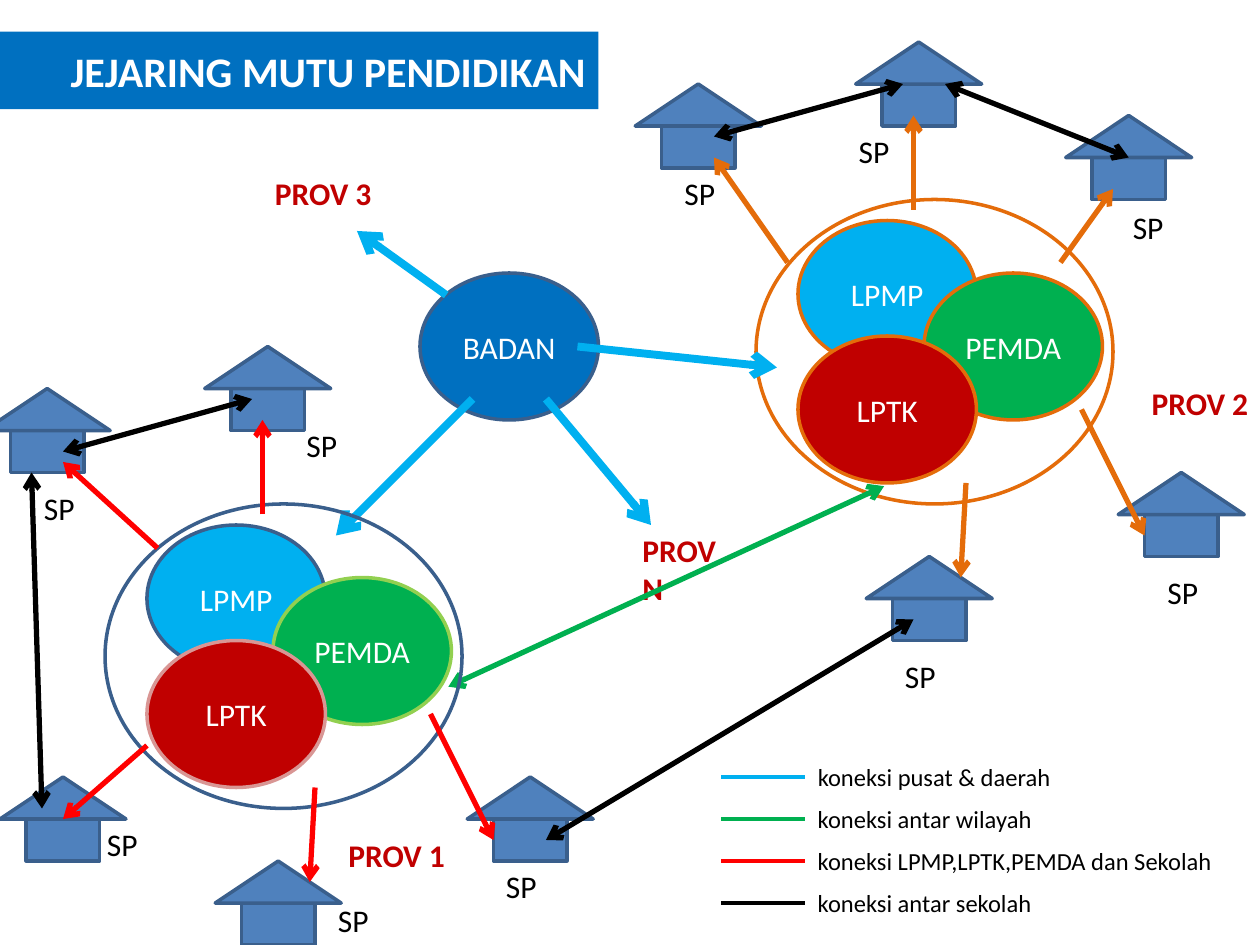
import pptx
import pptx.util
import pptx.dml.color
import pptx.enum.shapes
import pptx.enum.text
import pptx.oxml
import pptx.oxml.ns
from dataclasses import dataclass
from lxml import etree

SHAPE = pptx.enum.shapes.MSO_SHAPE
ALIGN = pptx.enum.text.PP_ALIGN
MIDDLE = pptx.enum.text.MSO_ANCHOR.MIDDLE


@dataclass(frozen=True)
class Theme:
    font: str = "Calibri"
    title_size: int = 24
    body_size: int = 18
    legend_size: int = 14
    white: str = "FFFFFF"
    black: str = "000000"
    navy: str = "0070C0"
    sky: str = "00B0F0"
    green: str = "00B050"
    maroon: str = "C00000"
    red: str = "FF0000"
    orange: str = "E46C0A"
    house: str = "4F81BD"
    outline: str = "3A5F8C"
    lime: str = "92D050"
    rose: str = "D99694"
    outline_width: float = 2
    link_width: float = 3
    national_width: float = 4.5
    legend_width: float = 2.25


THEME = Theme()

# Content. All positions are columns and rows of a 120 x 90 grid.
COLUMNS, ROWS = 120, 90
TITLE = "JEJARING MUTU PENDIDIKAN"
INSTITUTIONS = [  # name, offset in the ring, fill
    ("LPMP", (4, 2), THEME.sky),
    ("PEMDA", (16, 7), THEME.green),
    ("LPTK", (4, 13), THEME.maroon),
]
SHARED_ARROWS = [((15, 1), (15, -8)), ((31, 20), (37, 32)), ((20, 27), (19.5, 36))]

# Houses (house and its "SP" label) and arrows are offsets from the ring's corner.
PROVINCE_2 = {
    "corner": (72, 19),
    "ring": THEME.orange,
    "outlines": [THEME.orange] * 3,
    "houses": [((-9, -7), (-8, -3)), ((12, -11), (8.6, -7)), ((32, -4), (34.7, 0.2)),
               ((37, 30), (38, 35)), ((13, 38), (13, 43))],
    "arrows": SHARED_ARROWS + [((3, 6), (-4, -4)), ((29, 6), (34, -1))],
    "arrow_colour": THEME.orange,
}
PROVINCE_1 = {
    "corner": (10, 48),
    "ring": THEME.outline,
    "outlines": [THEME.outline, THEME.lime, THEME.rose],
    "houses": [((-9, -7), (-7, -2)), ((12, -11), (18, -8)), ((-7.5, 30), (-1, 30)),
               ((37, 30), (37, 34)), ((13, 38), (21, 37.2))],
    "arrows": SHARED_ARROWS + [((5, 4.2), (-4, -4)), ((4, 23), (-4, 30))],
    "arrow_colour": THEME.red,
}
PROVINCE_NAMES = [("PROV 1", (32, 79)), ("PROV 2", (108.5, 36)),
                  ("PROV 3", (25, 16)), ("PROV N", (60, 50))]
NATIONAL_ARROWS = [((55, 33), (74, 35)), ((45, 38), (32, 51)),
                   ((42.5, 28.1), (34, 22)), ((52, 38), (62, 50))]
REGIONAL_LINK = ((42.7, 65.4), (84.2, 46.3))
SCHOOL_LINKS = [((24, 38), (6, 43)), ((4, 77), (3, 45)), ((86, 8), (68, 13)),
                ((107.5, 15), (90, 8)), ((87, 59), (52, 80))]
LEGEND = [
    ("koneksi pusat & daerah", THEME.sky, 24.8),
    ("koneksi antar wilayah", THEME.green, 23),
    ("koneksi LPMP,LPTK,PEMDA dan Sekolah", THEME.red, 40.3),
    ("koneksi antar sekolah", THEME.black, 23),
]

deck = pptx.Presentation()
deck.slide_width, deck.slide_height = pptx.util.Inches(10), pptx.util.Inches(7.5)
page = deck.slides.add_slide(deck.slide_layouts[5])
docks = {}  # middle of a house's side -> (house body, connection site)


def across(columns):
    return round(deck.slide_width * columns / COLUMNS)


def down(rows):
    return round(deck.slide_height * rows / ROWS)


def shift(corner, offset):
    return corner[0] + offset[0], corner[1] + offset[1]


def colour(value):
    return pptx.dml.color.RGBColor.from_string(value)


def write(box, text, size, text_colour, bold=False, align=ALIGN.LEFT):
    box.text_frame.text = text
    para = box.text_frame.paragraphs[0]
    para.alignment = align
    font = para.runs[0].font
    font.name, font.size, font.bold = THEME.font, pptx.util.Pt(size), bold
    font.color.rgb = colour(text_colour)


def add_label(text, place, size, text_colour=THEME.black, text_size=THEME.body_size, bold=False):
    box = page.shapes.add_textbox(across(place[0]), down(place[1]), across(size[0]), down(size[1]))
    box.text_frame.word_wrap = False
    write(box, text, text_size, text_colour, bold)
    return box


def add_figure(kind, place, size, fill, outline):
    figure = page.shapes.add_shape(
        kind, across(place[0]), down(place[1]), across(size[0]), down(size[1]))
    figure.shadow.inherit = False
    if fill:
        figure.fill.solid()
        figure.fill.fore_color.rgb = colour(fill)
    else:
        figure.fill.background()
    figure.line.color.rgb = colour(outline)
    figure.line.width = pptx.util.Pt(THEME.outline_width)
    return figure


def add_institution(name, place, fill, outline):
    oval = add_figure(SHAPE.OVAL, place, (17, 14), fill, outline)
    oval.text_frame.vertical_anchor = MIDDLE
    write(oval, name, THEME.body_size, THEME.white, align=ALIGN.CENTER)


def add_house(place):
    body = add_figure(SHAPE.RECTANGLE, place, (7, 4), THEME.house, THEME.outline)
    add_figure(SHAPE.ISOSCELES_TRIANGLE, shift(place, (-2.5, -4)), (12, 4),
               THEME.house, THEME.outline)
    for site, middle in enumerate([(3.5, 0), (0, 2), (3.5, 4), (7, 2)]):
        docks[shift(place, middle)] = (body, site)


def add_link(start, end, line_colour, width, arrows=("tailEnd",)):
    link = page.shapes.add_connector(
        pptx.enum.shapes.MSO_CONNECTOR.STRAIGHT,
        across(start[0]), down(start[1]), across(end[0]), down(end[1]))
    link.line.color.rgb = colour(line_colour)
    link.line.width = pptx.util.Pt(width)
    outline = link.line._get_or_add_ln()
    for arrow in arrows:
        etree.SubElement(outline, pptx.oxml.ns.qn("a:" + arrow), type="arrow")
    etree.SubElement(link._element.spPr, pptx.oxml.ns.qn("a:effectLst"))
    if start in docks:
        link.begin_connect(*docks[start])
    if end in docks:
        link.end_connect(*docks[end])
    return link


def add_province(province):
    corner = province["corner"]
    for (name, offset, fill), outline in zip(INSTITUTIONS, province["outlines"]):
        add_institution(name, shift(corner, offset), fill, outline)
    add_figure(SHAPE.OVAL, corner, (34, 29), None, province["ring"])
    for house, label in province["houses"]:
        add_house(shift(corner, house))
        add_label("SP", shift(corner, label), (5.4, 4.8))
    for start, end in province["arrows"]:
        add_link(shift(corner, start), shift(corner, end),
                 province["arrow_colour"], THEME.link_width)


# Title banner
title = page.shapes.title
title.left, title.top, title.width, title.height = across(-4), down(3), across(61), down(7.4)
title._element.spPr.append(pptx.oxml.parse_xml(
    '<a:prstGeom %s prst="roundRect"><a:avLst><a:gd name="adj" fmla="val 33200"/>'
    '</a:avLst></a:prstGeom>' % pptx.oxml.ns.nsdecls("a")))
title.fill.solid()
title.fill.fore_color.rgb = colour(THEME.navy)
title.text_frame.auto_size = pptx.enum.text.MSO_AUTO_SIZE.NONE
title.text_frame.vertical_anchor = MIDDLE
write(title, TITLE, THEME.title_size, THEME.white, True, ALIGN.RIGHT)

# National body, provinces and the links between them
add_institution("BADAN", (40, 26), THEME.navy, THEME.outline)
add_province(PROVINCE_2)
for start, end in NATIONAL_ARROWS:
    add_link(start, end, THEME.sky, THEME.national_width)
for name, place in PROVINCE_NAMES:
    add_label(name, place, (12, 4.8), THEME.maroon, bold=True)
add_link(*REGIONAL_LINK, THEME.green, THEME.link_width, ("headEnd", "tailEnd"))
add_province(PROVINCE_1)
for start, end in SCHOOL_LINKS:
    add_link(start, end, THEME.black, THEME.link_width, ("headEnd", "tailEnd"))

# Legend
for row, (text, line_colour, width) in enumerate(LEGEND):
    top = 72 + 4 * row
    label = add_label(text, (76.7, top), (width, 4), text_size=THEME.legend_size)
    key = add_link((68.7, top + 2), (76.7, top + 2), line_colour, THEME.legend_width, ())
    key.end_connect(label, 1)

deck.save("out.pptx")
